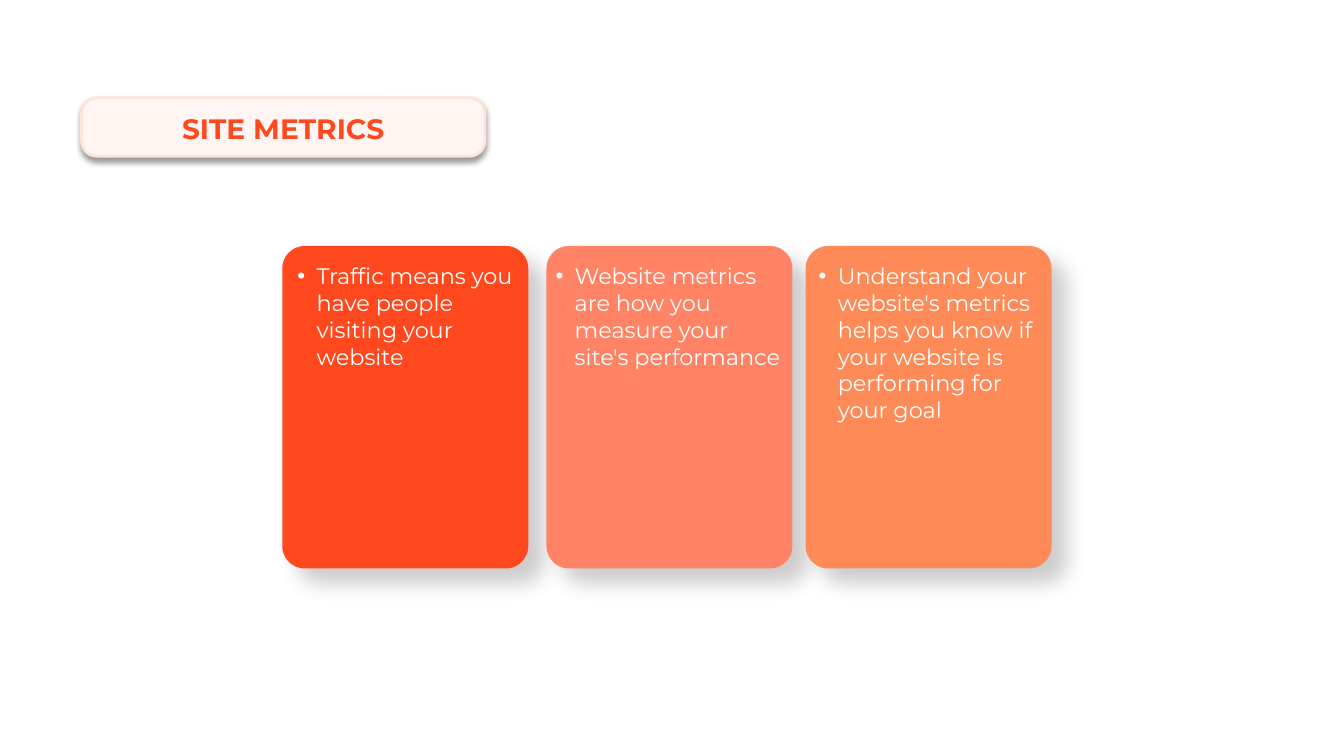
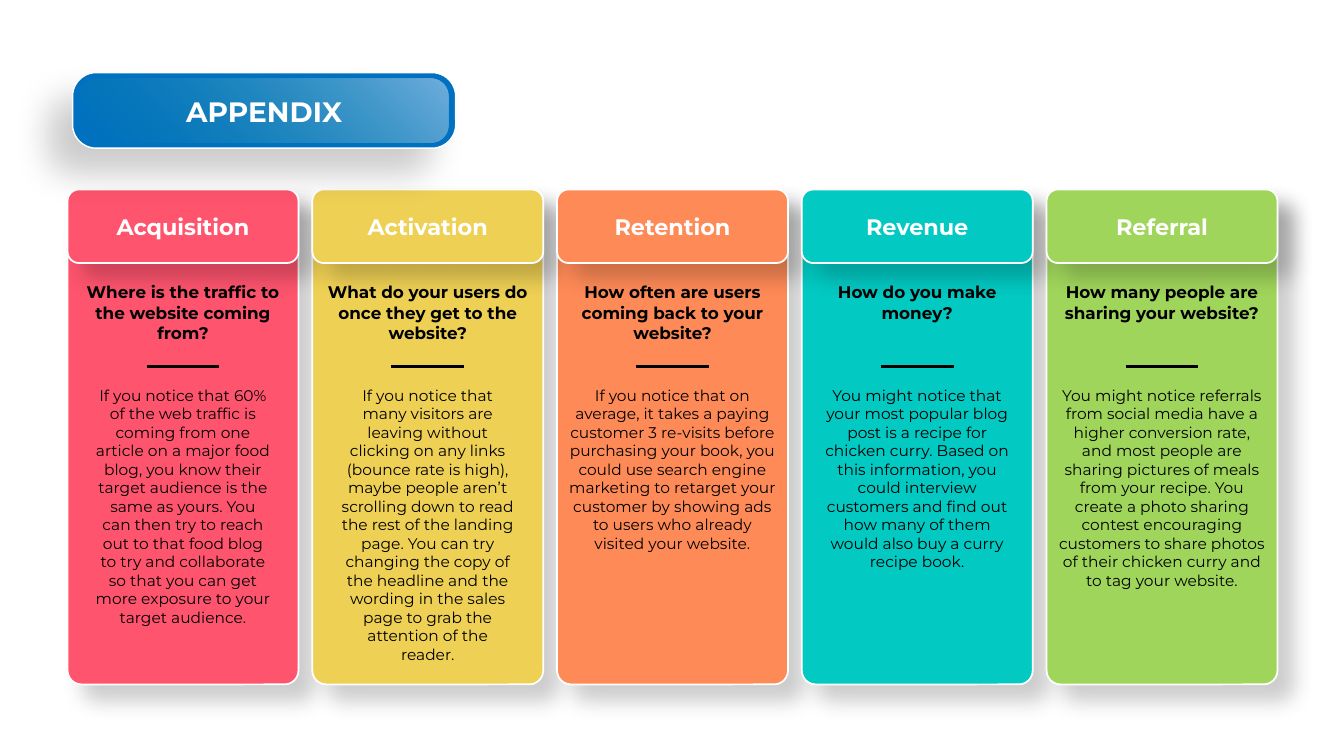
"""Build the site metrics slide and the five-column appendix slide."""
from dataclasses import dataclass

from lxml.etree import SubElement
from pptx import Presentation
from pptx.dml.color import RGBColor
from pptx.enum.shapes import MSO_CONNECTOR, MSO_SHAPE
from pptx.enum.text import MSO_ANCHOR, MSO_AUTO_SIZE, PP_ALIGN
from pptx.oxml.ns import qn
from pptx.util import Inches, Pt


@dataclass(frozen=True)
class Theme:
    font: str = "Montserrat"
    white: str = "FFFFFF"
    black: str = "000000"
    red: str = "FF481D"
    coral: str = "FF8364"
    orange: str = "FE8A57"
    pink: str = "FE546E"
    yellow: str = "EED054"
    teal: str = "02C9C2"
    green: str = "9FD55B"
    blue: str = "0070C0"
    badge_green: str = "1DA875"
    blush: str = "FFF5F3"
    peach: str = "FBE5D6"
    title_size: int = 20
    heading_size: int = 16
    question_size: int = 12
    body_size: int = 11
    card_shadow: tuple = (20, 15, 15, 45)
    plain_badge_shadow: tuple = (40, 4, 3, 90)
    blue_badge_shadow: tuple = (20, 25, 25, 135)


THEME = Theme()
SLIDE_SIZE = (13.33, 7.5)

METRICS_TITLE = "SITE METRICS"
METRICS = [
    (THEME.red, 2.8, 0.15, 2.26, "Traffic means you have people visiting your website"),
    (THEME.coral, 5.42, 0.09, 2.27,
     "Website metrics are how you measure your site's performance"),
    (THEME.orange, 7.99, 0.13, 2.17,
     "Understand your website's metrics helps you know if your website is performing for your goal"),
]

APPENDIX_TITLE = "APPENDIX"
STAGES = [
    ("Acquisition", THEME.pink, "Where is the traffic to the website coming from?", 1.95,
     "If you notice that 60% of the web traffic is coming from one article on a major food blog, "
     "you know their target audience is the same as yours. You can then try to reach out to that "
     "food blog to try and collaborate so that you can get more exposure to your target audience."),
    ("Activation", THEME.yellow, "What do your users do once they get to the website?", 1.95,
     "If you notice that many visitors are leaving without clicking on any links (bounce rate is "
     "high), maybe people aren’t scrolling down to read the rest of the landing page. You can try "
     "changing the copy of the headline and the wording in the sales page to grab the attention "
     "of the reader."),
    ("Retention", THEME.orange, "How often are users coming back to your website?", 2.3,
     "If you notice that on average, it takes a paying customer 3 re-visits before purchasing "
     "your book, you could use search engine marketing to retarget your customer by showing ads "
     "to users who already visited your website."),
    ("Revenue", THEME.teal, "How do you make money?", 2.1,
     "You might notice that your most popular blog post is a recipe for chicken curry. Based on "
     "this information, you could interview customers and find out how many of them would also "
     "buy a curry recipe book."),
    ("Referral", THEME.green, "How many people are sharing your website?", 2.27,
     "You might notice referrals from social media have a higher conversion rate, and most people "
     "are sharing pictures of meals from your recipe. You create a photo sharing contest "
     "encouraging customers to share photos of their chicken curry and to tag your website."),
]


def column_lefts(first, last, count):
    step = (last - first) / (count - 1)
    return [first + step * index for index in range(count)]


def add_panel(slide, box, radius, fill=None, line=None, shadow=None):
    shape = slide.shapes.add_shape(MSO_SHAPE.ROUNDED_RECTANGLE, *map(Inches, box))
    shape.adjustments[0] = radius
    if fill:
        shape.fill.solid()
        shape.fill.fore_color.rgb = RGBColor.from_string(fill)
    if line:
        color, width = line
        shape.line.color.rgb = RGBColor.from_string(color)
        shape.line.width = Pt(width)
    else:
        shape.line.fill.background()
    shape.shadow.inherit = False
    if shadow:
        opacity, blur, distance, angle = shadow
        effects = shape.element.spPr.find(qn("a:effectLst"))
        outer = SubElement(effects, qn("a:outerShdw"), blurRad=str(Pt(blur)), dist=str(Pt(distance)),
                           dir=str(angle * 60000), algn="ctr", rotWithShape="0")
        color = SubElement(outer, qn("a:srgbClr"), val=THEME.black)
        SubElement(color, qn("a:alpha"), val=str(opacity * 1000))
    return shape


def add_bullet(paragraph):
    properties = paragraph._p.get_or_add_pPr()
    properties.set("marL", str(Inches(0.19)))
    properties.set("indent", str(-Inches(0.19)))
    color = SubElement(properties, qn("a:buClr"))
    SubElement(color, qn("a:srgbClr"), val=THEME.white)
    SubElement(properties, qn("a:buFont"), typeface="Arial")
    SubElement(properties, qn("a:buChar"), char="•")
    paragraph.space_after = Pt(10)


def write(shape, text, size, color, bold=False, bullet=False, anchor=MSO_ANCHOR.TOP):
    frame = shape.text_frame
    frame.text = text
    frame.word_wrap = True
    frame.auto_size = MSO_AUTO_SIZE.NONE
    frame.vertical_anchor = anchor
    paragraph = frame.paragraphs[0]
    if bullet:
        add_bullet(paragraph)
    paragraph.alignment = PP_ALIGN.LEFT if bullet else PP_ALIGN.CENTER
    paragraph.space_before = Pt(0)
    font = paragraph.font
    font.name, font.size, font.bold = THEME.font, Pt(size), bold
    font.color.rgb = RGBColor.from_string(color)


def add_text(slide, box, *style, **options):
    write(slide.shapes.add_textbox(*map(Inches, box)), *style, **options)


def place_on_top(placeholder, box):
    placeholder.left, placeholder.top, placeholder.width, placeholder.height = map(Inches, box)
    placeholder.element.getparent().append(placeholder.element)


def set_title(slide, text, box, color):
    title = slide.shapes.title
    place_on_top(title, box)
    write(title, text, THEME.title_size, color, bold=True, anchor=MSO_ANCHOR.MIDDLE)


def write_list(placeholder, text):
    frame = placeholder.text_frame
    frame.margin_left = frame.margin_right = frame.margin_top = frame.margin_bottom = 0
    write(placeholder, text, THEME.heading_size, THEME.white, bullet=True)


def add_rule(slide, center, top, width):
    connector = slide.shapes.add_connector(
        MSO_CONNECTOR.STRAIGHT, *map(Inches, (center - width / 2, top, center + width / 2, top)))
    connector.line.color.rgb = RGBColor.from_string(THEME.black)
    connector.line.width = Pt(2)
    SubElement(connector.element.spPr, qn("a:effectLst"))


def build_metrics(presentation):
    slide = presentation.slides.add_slide(presentation.slide_layouts.get_by_name("Comparison"))
    bodies = list(slide.placeholders)[1:]
    for color, left, *_ in METRICS:
        add_panel(slide, (left, 2.44, 2.44, 3.2), 0.092, color, shadow=THEME.card_shadow)
    for body, (_, left, inset, width, text) in zip(bodies, METRICS):
        place_on_top(body, (left + inset, 2.6, width, 2.6))
        write_list(body, text)
    for unused in bodies[len(METRICS):]:
        unused.element.getparent().remove(unused.element)
    add_panel(slide, (0.81, 0.97, 4, 0.58), 0.259, THEME.blush, (THEME.peach, 2),
              THEME.plain_badge_shadow)
    set_title(slide, METRICS_TITLE, (0.81, 1.05, 4, 0.44), THEME.red)


def add_blue_badge(slide):
    add_panel(slide, (0.72, 0.72, 3.8, 0.75), 0.313, THEME.blue, (THEME.white, 1),
              THEME.blue_badge_shadow)
    sheen = add_panel(slide, (0.79, 0.78, 3.66, 0.63), 0.283)
    sheen.fill.gradient()
    sheen.fill.gradient_angle = 45
    stops = [(0, THEME.badge_green, 0), (0.97, THEME.white, 41)]
    for stop, (position, color, _) in zip(sheen.fill.gradient_stops, stops):
        stop.position = position
        stop.color.rgb = RGBColor.from_string(color)
    colors = list(sheen.element.spPr.iter(qn("a:srgbClr")))
    for color, (*_, opacity) in zip(colors, stops):
        SubElement(color, qn("a:alpha"), val=str(opacity * 1000))


def build_appendix(presentation):
    slide = presentation.slides.add_slide(presentation.slide_layouts.get_by_name("Title Only"))
    top, width = 1.88, 2.29
    outline = (THEME.white, 1.25)
    columns = list(zip(column_lefts(0.67, 10.38, len(STAGES)), STAGES))
    for left, (_, color, *_) in columns:
        add_panel(slide, (left, top, width, 4.91), 0.06, color, outline, THEME.card_shadow)
    for left, (name, color, question, body_width, body) in columns:
        center = left + width / 2
        header = add_panel(slide, (left, top, width, 0.73), 0.155, color, outline,
                           THEME.card_shadow)
        write(header, name, THEME.heading_size, THEME.white, bold=True, anchor=MSO_ANCHOR.MIDDLE)
        add_text(slide, (left, 2.75, width, 0.71), question, THEME.question_size, THEME.black,
                 bold=True)
        add_rule(slide, center, 3.64, 0.72)
        add_text(slide, (center - body_width / 2, 3.78, body_width, 2.88), body,
                 THEME.body_size, THEME.black)
    add_blue_badge(slide)
    set_title(slide, APPENDIX_TITLE, (0.79, 0.88, 3.66, 0.44), THEME.white)


def main():
    presentation = Presentation()
    presentation.slide_width, presentation.slide_height = map(Inches, SLIDE_SIZE)
    build_metrics(presentation)
    build_appendix(presentation)
    presentation.save("out.pptx")


if __name__ == "__main__":
    main()
